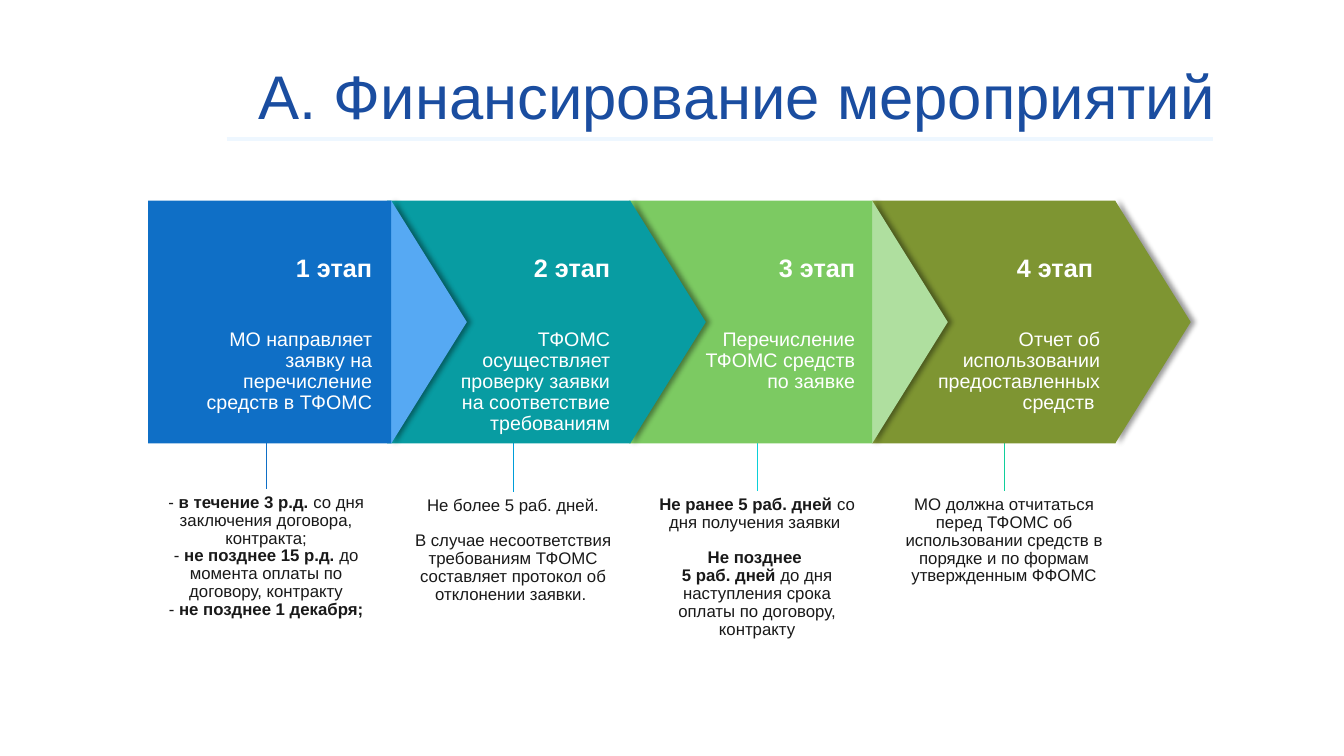
from dataclasses import dataclass

from lxml.etree import SubElement
from pptx import Presentation
from pptx.dml.color import RGBColor
from pptx.enum.shapes import MSO_CONNECTOR, MSO_SHAPE
from pptx.enum.text import MSO_ANCHOR, PP_ALIGN
from pptx.oxml.ns import qn
from pptx.util import Inches, Pt


@dataclass(frozen=True)
class Theme:
    font: str = "Arial"
    title: str = "1A4DA0"
    rule: str = "EEF7FF"
    light: str = "FFFFFF"
    ink: str = "191919"
    title_size: int = 44
    stage_size: int = 18
    body_size: int = 14
    note_size: int = 12
    spacing: float = 0.89


@dataclass(frozen=True)
class Stage:
    left: float
    fill: str
    tip: str
    heading: str
    heading_right: float
    body: tuple
    body_width: float
    body_right: float
    line: str
    line_top: float
    note_left: float
    note_top: float
    note: tuple
    note_gap: float = 0


THEME = Theme()
SIDE, TOP, TIP = 2.41, 1.99, 0.75

STAGES = [
    Stage(1.47, "0F6FC6", "56A9F3", "1 этап", 3.79,
          ("МО направляет заявку на перечисление средств в ТФОМС",), 2.23, 3.79,
          "0F6FC6", 3.85, 1.54, 4.85,
          ((("- ", False), ("в течение 3 р.д. ", True), ("со дня заключения договора, контракта;", False)),
           (("- ", False), ("не позднее 15 р.д. ", True), ("до момента оплаты по договору, контракту", False)),
           (("- ", False), ("не позднее 1 декабря;", True)))),
    Stage(3.84, "089CA2", "089CA2", "2 этап", 6.15,
          ("ТФОМС осуществляет проверку заявки на соответствие требованиям",), 1.94, 6.15,
          "009DD9", 3.77, 3.99, 4.88,
          ((("Не более 5 раб. дней.", False),),
           (("В случае несоответствия требованиям ТФОМС составляет протокол об отклонении заявки. ", False),)),
          12.5),
    Stage(6.24, "7CCA62", "AFDF9F", "3 этап", 8.58,
          ("Перечисление", "ТФОМС средств по заявке"), 1.76, 8.58,
          "0BD0D9", 3.85, 6.41, 4.87,
          ((("Не ранее 5 раб. дней", True), (" со дня получения заявки ", False)),
           (("Не позднее \n5 раб. дней", True), (" до дня наступления срока оплаты по договору, контракту", False))),
          12.5),
    Stage(8.65, "7E9532", "7E9532", "4 этап", 10.94,
          ("Отчет об использовании предоставленных средств ",), 2.14, 11.01,
          "10CF9B", 3.77, 8.86, 4.87,
          ((("МО должна отчитаться перед ТФОМС об использовании средств в порядке и по формам утвержденным ФФОМС", False),),)),
]


def add_run(p, text, size, color, bold=False):
    for i, part in enumerate(text.split("\n")):
        if i:
            p.add_line_break()
        r = p.add_run()
        r.text = part
        r.font.name = THEME.font
        r.font.size = Pt(size)
        r.font.bold = bold
        r.font.color.rgb = RGBColor.from_string(color)


def add_text(s, box, paragraphs, size, color, align, gap=0):
    sp = s.shapes.add_textbox(*map(Inches, box))
    tf = sp.text_frame
    tf.word_wrap = True
    for i, runs in enumerate(paragraphs):
        p = tf.add_paragraph() if i else tf.paragraphs[0]
        p.alignment = align
        p.line_spacing = THEME.spacing
        if i and gap:
            p.space_before = Pt(gap)
        for text, bold in runs:
            add_run(p, text, size, color, bold)
    return sp


def add_line(s, x1, y1, x2, y2, color, width):
    cn = s.shapes.add_connector(MSO_CONNECTOR.STRAIGHT, *map(Inches, (x1, y1, x2, y2)))
    cn.line.color.rgb = RGBColor.from_string(color)
    cn.line.width = Pt(width)
    SubElement(cn._element.spPr, qn("a:effectLst"))
    return cn


def add_block(s, kind, box, color):
    sp = s.shapes.add_shape(kind, *map(Inches, box))
    sp.shadow.inherit = False
    sp.fill.solid()
    sp.fill.fore_color.rgb = RGBColor.from_string(color)
    sp.line.fill.background()
    return sp


def add_shadow(sp):
    effects = sp._element.spPr.find(qn("a:effectLst"))
    shadow = SubElement(effects, qn("a:outerShdw"), blurRad=str(Pt(4)),
                        dist=str(Pt(3)), dir="0", algn="ctr", rotWithShape="0")
    color = SubElement(shadow, qn("a:srgbClr"), val="000000")
    SubElement(color, qn("a:alpha"), val="40000")


def add_title(s, box):
    left, top, width, height = box
    add_line(s, 2.25, top + height, 12.03, top + height, THEME.rule, 3)
    sp = s.shapes.title
    sp.left, sp.top, sp.width, sp.height = map(Inches, box)
    tf = sp.text_frame
    tf.word_wrap = True
    tf.vertical_anchor = MSO_ANCHOR.MIDDLE
    p = tf.paragraphs[0]
    p.alignment = PP_ALIGN.RIGHT
    p.line_spacing = 0.9
    add_run(p, "А. Финансирование мероприятий", THEME.title_size, THEME.title)


def add_note(s, stage, box):
    left, top, width, height = box
    note = add_text(s, box, stage.note, THEME.note_size, THEME.ink, PP_ALIGN.CENTER, stage.note_gap)
    mid = left + width / 2
    cn = add_line(s, mid, top, mid, stage.line_top, stage.line, 0.75)
    cn.begin_connect(note, 0)


def add_stage(s, stage, box):
    left, top, width, height = box
    tip = add_block(s, MSO_SHAPE.ISOSCELES_TRIANGLE,
                    (left + width + (TIP - height) / 2, top + (height - TIP) / 2, height, TIP), stage.tip)
    tip.rotation = 90
    add_shadow(tip)
    add_block(s, MSO_SHAPE.RECTANGLE, box, stage.fill)
    add_text(s, (stage.body_right - stage.body_width, top + 1.23, stage.body_width, 0.94),
             [((line, False),) for line in stage.body], THEME.body_size, THEME.light, PP_ALIGN.RIGHT)
    add_text(s, (stage.heading_right - 1.43, top + 0.5, 1.43, 0.37),
             [((stage.heading, True),)], THEME.stage_size, THEME.light, PP_ALIGN.RIGHT)


def main():
    prs = Presentation()
    prs.slide_width, prs.slide_height = Inches(13.33), Inches(7.5)
    s = prs.slides.add_slide(prs.slide_layouts[5])
    add_title(s, (0.57, 0.59, 11.59, 0.79))
    for stage in STAGES:
        add_note(s, stage, (stage.note_left, stage.note_top, 2.2, 1.54))
    for stage in reversed(STAGES):
        add_stage(s, stage, (stage.left, TOP, SIDE, SIDE))
    prs.save("out.pptx")


if __name__ == "__main__":
    main()
